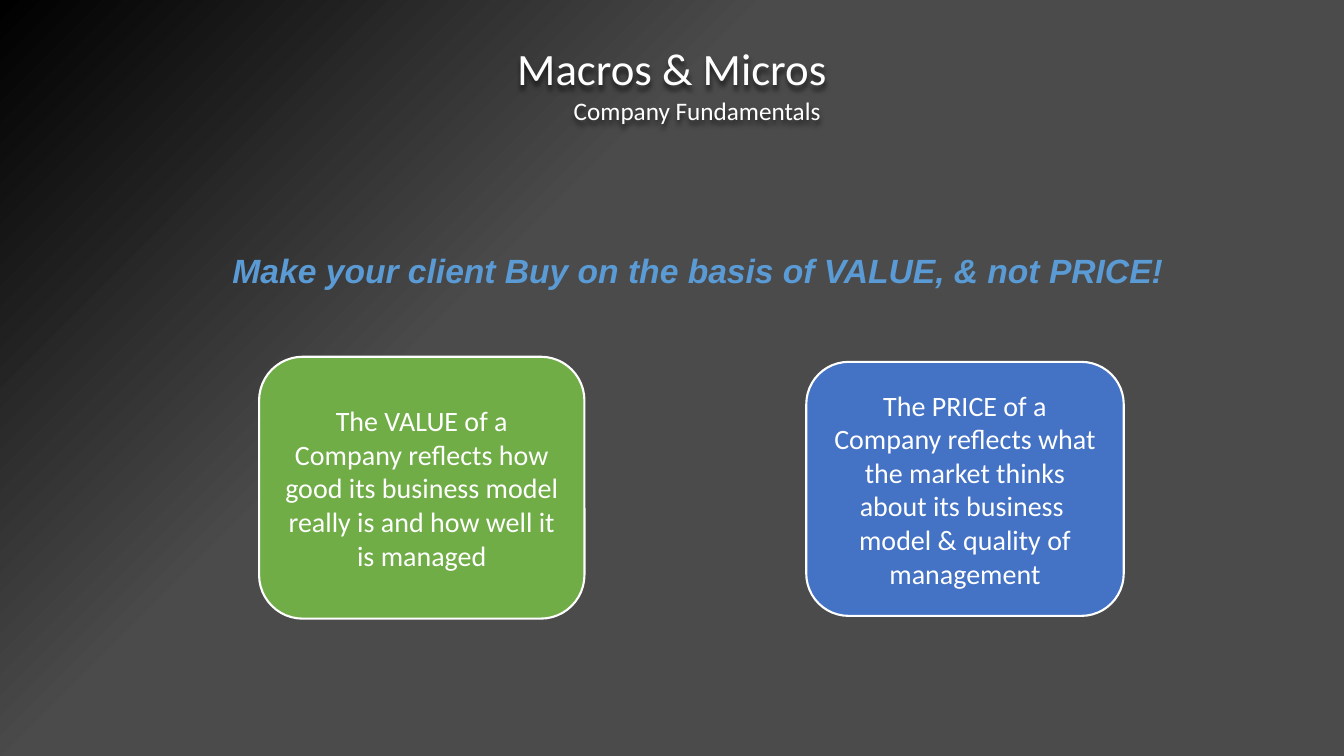
from lxml import etree
from pptx import Presentation
from pptx.dml.color import RGBColor
from pptx.enum.shapes import MSO_SHAPE
from pptx.enum.text import MSO_ANCHOR, PP_ALIGN
from pptx.oxml import parse_xml
from pptx.oxml.ns import nsdecls
from pptx.util import Cm, Pt

BLACK = RGBColor(0x00, 0x00, 0x00)
GRAY = RGBColor(0x4B, 0x4B, 0x4B)
WHITE = RGBColor(0xFF, 0xFF, 0xFF)
SKY = RGBColor(0x5B, 0x9B, 0xD5)
GREEN = RGBColor(0x70, 0xAD, 0x47)
BLUE = RGBColor(0x44, 0x72, 0xC4)


def add_run(paragraph, text, size, color=WHITE, font_name="Calibri"):
    run = paragraph.add_run()
    run.text = text
    run.font.name = font_name
    run.font.size = Pt(size)
    run.font.color.rgb = color
    return run


def add_text_frame(slide, box):
    shape = slide.shapes.add_textbox(*box)
    shape.text_frame.word_wrap = True
    return shape


def add_soft_shadow(shape):
    shape._element.spPr.append(parse_xml(
        f'<a:effectLst {nsdecls("a")}>'
        '<a:outerShdw blurRad="50800" dist="38100" dir="5400000" algn="t" rotWithShape="0">'
        '<a:srgbClr val="000000"><a:alpha val="60000"/></a:srgbClr>'
        '</a:outerShdw></a:effectLst>'))


def paint_background(slide):
    """Fade diagonally from a black top left corner to gray."""
    fill = slide.background.fill
    fill.gradient()
    fill.gradient_angle = 315
    for stop, color, position in zip(fill.gradient_stops, (BLACK, GRAY), (0, 0.37)):
        stop.color.rgb = color
        stop.position = position


def add_heading(slide, box):
    shape = add_text_frame(slide, box)
    add_soft_shadow(shape)
    frame = shape.text_frame
    frame.vertical_anchor = MSO_ANCHOR.MIDDLE
    title = frame.paragraphs[0]
    add_run(title, "Macros & Micros", 32)
    subtitle = frame.add_paragraph()
    subtitle.level = 1
    subtitle._p.get_or_add_pPr().set("marL", str(Cm(1.27)))
    add_run(subtitle, "Company Fundamentals", 18)
    for paragraph in (title, subtitle):
        paragraph.alignment = PP_ALIGN.CENTER


def add_slogan(slide, box):
    paragraph = add_text_frame(slide, box).text_frame.paragraphs[0]
    paragraph.line_spacing = 1.5
    run = add_run(paragraph, "Make your client Buy on the basis of VALUE, & not PRICE!",
                  24, SKY, "Arial")
    run.font.bold = True
    run.font.italic = True


def add_card(slide, box, color, text):
    card = slide.shapes.add_shape(MSO_SHAPE.ROUNDED_RECTANGLE, *box)
    card.shadow.inherit = False
    card.fill.solid()
    card.fill.fore_color.rgb = color
    card.line.color.rgb = WHITE
    card.line.width = Pt(1.5)
    frame = card.text_frame
    frame.word_wrap = True
    frame.vertical_anchor = MSO_ANCHOR.MIDDLE
    paragraph = frame.paragraphs[0]
    paragraph.alignment = PP_ALIGN.CENTER
    add_run(paragraph, text, 20)


def main():
    presentation = Presentation()
    presentation.slide_width = Cm(33.87)
    presentation.slide_height = Cm(19.05)
    slide = presentation.slides.add_slide(presentation.slide_layouts[6])
    paint_background(slide)
    add_slogan(slide, (Cm(5.61), Cm(5.66), Cm(25.12), Cm(1.6)))
    add_card(slide, (Cm(6.53), Cm(8.99), Cm(8.2), Cm(6.6)), GREEN,
             "The VALUE of a Company reflects how good its business model "
             "really is and how well it is managed")
    add_card(slide, (Cm(20.32), Cm(9.12), Cm(8), Cm(6.4)), BLUE,
             "The PRICE of a Company reflects what the market thinks about "
             "its business  model & quality of management")
    add_heading(slide, (Cm(8.92), Cm(-0.23), Cm(16.03), Cm(4.65)))
    presentation.save("out.pptx")


if __name__ == "__main__":
    main()
